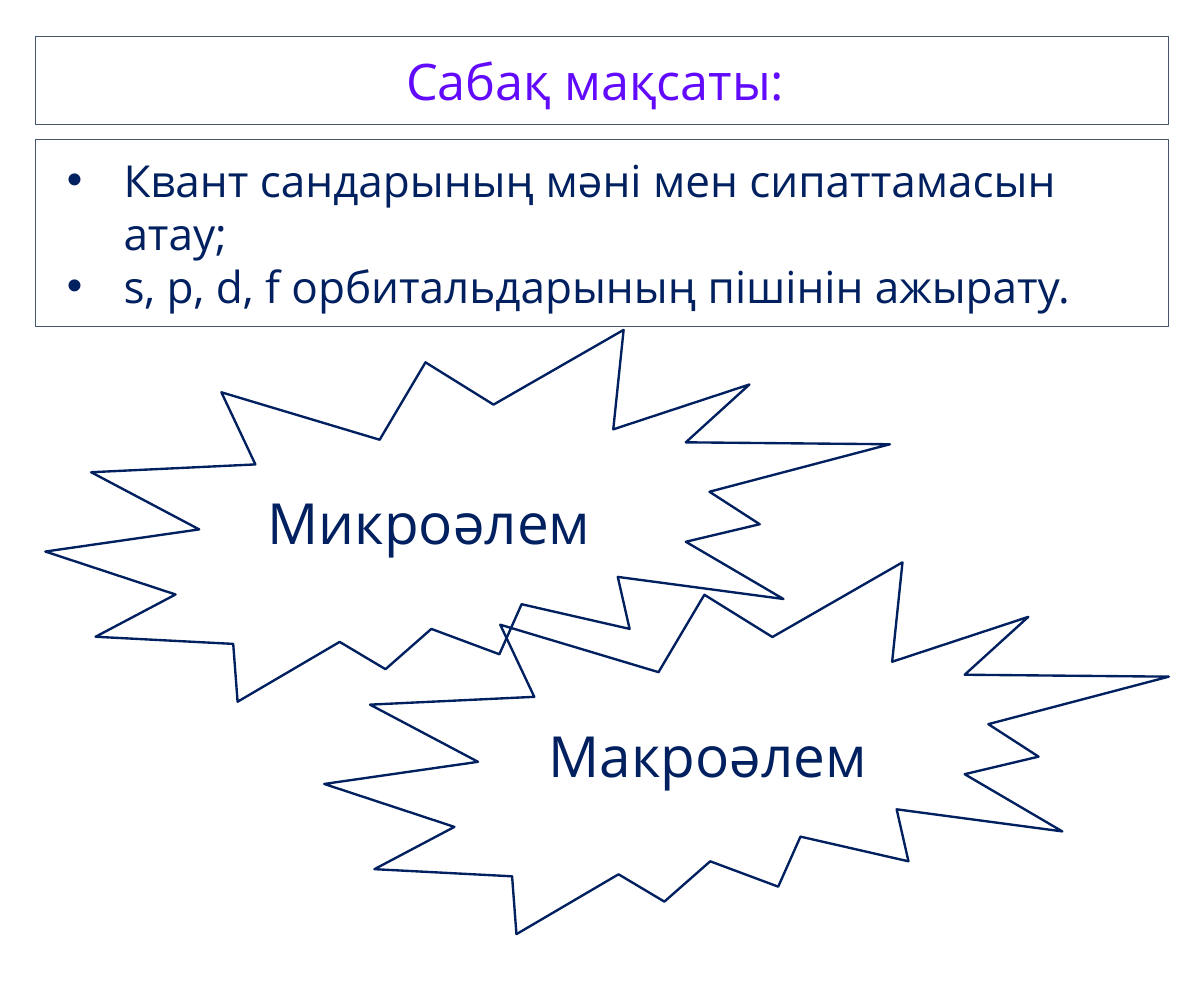
import pptx
import pptx.util
import pptx.dml.color
import pptx.enum.shapes
import pptx.enum.text
import pptx.oxml.ns
from lxml import etree

Inches = pptx.util.Inches
Pt = pptx.util.Pt
RGBColor = pptx.dml.color.RGBColor
Shape = pptx.enum.shapes.MSO_SHAPE
Align = pptx.enum.text.PP_ALIGN
Anchor = pptx.enum.text.MSO_ANCHOR

NAVY = RGBColor(0x00, 0x20, 0x60)
SLATE = RGBColor(0x44, 0x54, 0x6A)
VIOLET = RGBColor(0x62, 0x0B, 0xFC)


class Board:
    font = "Open Sans"
    left = 0.31
    width = 10

    def __init__(self, slide):
        self.slide = slide

    def outline(self, kind, left, top, width, height, color, weight):
        shape = self.slide.shapes.add_shape(
            kind, Inches(left), Inches(top), Inches(width), Inches(height))
        shape.shadow.inherit = False
        shape.fill.background()
        shape.line.color.rgb = color
        shape.line.width = Pt(weight)
        shape.text_frame.word_wrap = True
        return shape.text_frame

    def label(self, frame, lines, size, color, align):
        for index, line in enumerate(lines):
            para = frame.add_paragraph() if index else frame.paragraphs[0]
            para.alignment = align
            run = para.add_run()
            run.text = line
            run.font.name = self.font
            run.font.size = Pt(size)
            run.font.color.rgb = color

    def panel(self, top, height, lines, size, color, align):
        frame = self.outline(
            Shape.RECTANGLE, self.left, top, self.width, height, SLATE, 0.75)
        frame.vertical_anchor = Anchor.TOP
        frame.margin_left = frame.margin_right = Inches(0.28)
        frame.margin_top = frame.margin_bottom = Inches(0.12)
        self.label(frame, lines, size, color, align)
        return frame

    def bullets(self, top, height, lines):
        frame = self.panel(top, height, lines, 28, NAVY, Align.LEFT)
        for para in frame.paragraphs:
            props = para._p.get_or_add_pPr()
            props.set("marL", str(Inches(0.5)))
            props.set("indent", str(Inches(-0.5)))
            for tag, key, value in (("a:buFont", "typeface", "Arial"),
                                    ("a:buChar", "char", "•")):
                item = etree.SubElement(props, pptx.oxml.ns.qn(tag))
                item.set(key, value)

    def burst(self, left, top, text):
        frame = self.outline(
            Shape.EXPLOSION2, left, top, 7.45, 3.28, NAVY, 1.5)
        frame.vertical_anchor = Anchor.MIDDLE
        self.label(frame, [text], 36, NAVY, Align.CENTER)


def main():
    deck = pptx.Presentation()
    deck.slide_width = Inches(10.62)
    deck.slide_height = Inches(8.75)
    board = Board(deck.slides.add_slide(deck.slide_layouts[6]))
    board.panel(0.32, 0.78, ["Сабақ мақсаты: "], 32, VIOLET, Align.CENTER)
    board.bullets(1.23, 1.65, [
        "Квант сандарының мәні мен сипаттамасын атау;",
        "s, p, d, f орбитальдарының пішінін ажырату.",
    ])
    board.burst(0.4, 2.91, "Микроәлем ")
    board.burst(2.86, 4.96, "Макроәлем ")
    deck.save("out.pptx")


if __name__ == "__main__":
    main()
